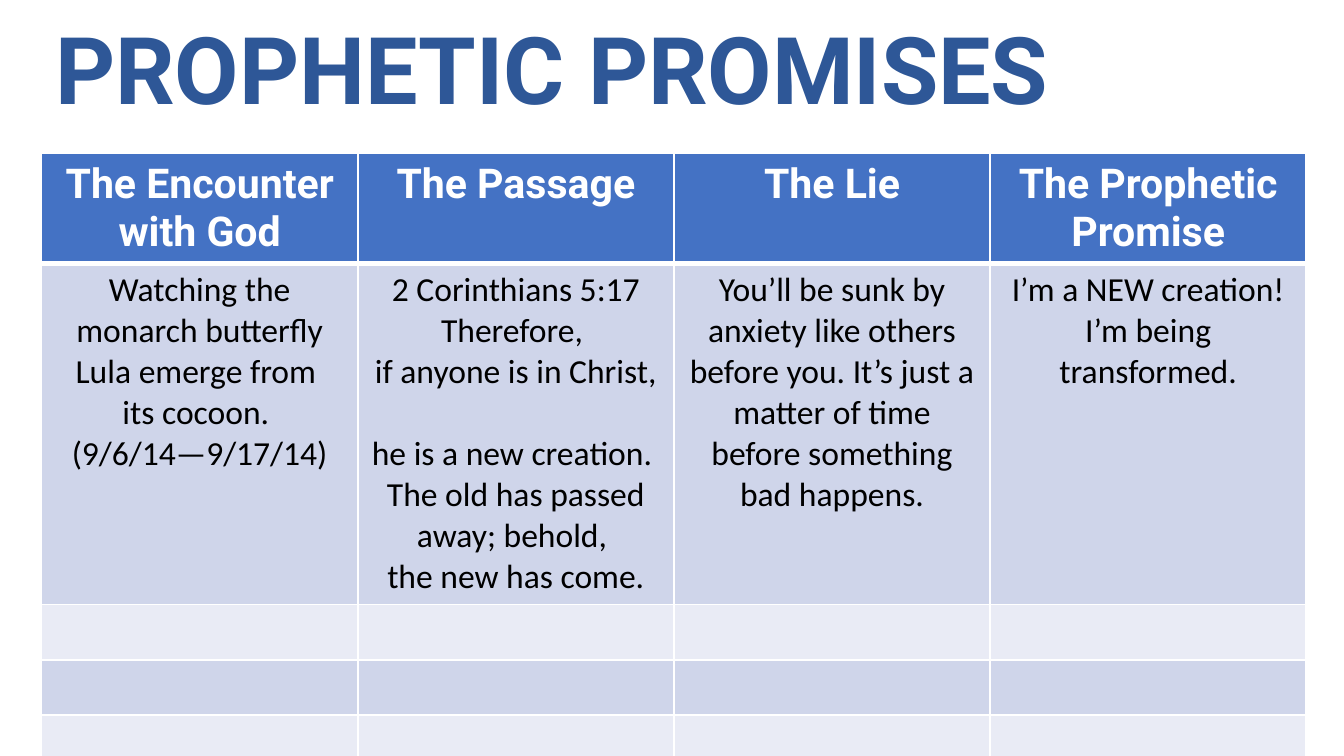
"""Build the Prophetic Promises table slide."""
from lxml import etree
from pptx import Presentation
from pptx.dml.color import RGBColor
from pptx.enum.text import MSO_ANCHOR, PP_ALIGN
from pptx.oxml.ns import qn
from pptx.util import Inches, Pt

LEFT, CENTER = PP_ALIGN.LEFT, PP_ALIGN.CENTER
MIDDLE = MSO_ANCHOR.MIDDLE
COLORS = {"title": "2E5797", "head": "4472C4", "dark": "CFD5EA",
          "light": "E9EBF5", "white": "FFFFFF", "black": "000000"}
HEADS = ["The Encounter with God", "The Passage", "The Lie", "The Prophetic Promise"]
BODY = [
    "Watching the monarch butterfly Lula emerge from \vits cocoon. \v(9/6/14—9/17/14)",
    "2 Corinthians 5:17 Therefore, \vif anyone is in Christ, \vhe is a new creation. "
    "\vThe old has passed away; behold, \vthe new has come.",
    "You’ll be sunk by anxiety like others before you. It’s just a matter of time "
    "before something bad happens.",
    "I’m a NEW creation!\nI’m being transformed.",
]
BLANK = [""] * 4
ROWS = [(HEADS, 0.81, "head"), (BODY, 2.54, "dark"), (BLANK, 0.41, "light"),
        (BLANK, 0.41, "dark"), (BLANK, 0.41, "light")]
WIDTH = 9.41


def style(para, name, size, color, bold, align):
    para.alignment = align
    font = para.font
    font.name, font.size, font.bold = name, Pt(size), bold
    font.color.rgb = RGBColor.from_string(COLORS[color])


def border(cell, side, width):
    line = etree.SubElement(cell._tc.get_or_add_tcPr(), qn(f"a:ln{side}"), w=str(Pt(width)))
    fill = etree.SubElement(line, qn("a:solidFill"))
    etree.SubElement(fill, qn("a:srgbClr"), val=COLORS["white"])


prs = Presentation()
prs.slide_width, prs.slide_height = Inches(10), Inches(10 * 9 / 16)
slide = prs.slides.add_slide(prs.slide_layouts[5])

title = slide.shapes.title
title.left, title.top = Inches(0.31), Inches(0.12)
title.width, title.height = Inches(9.6), Inches(0.86)
title.text = "PROPHETIC PROMISES"
title.text_frame.vertical_anchor = MIDDLE
para = title.text_frame.paragraphs[0]
para.line_spacing = 0.9
style(para, "Roboto", 50, "title", True, LEFT)

total = sum(height for _, height, _ in ROWS)
table = slide.shapes.add_table(len(ROWS), len(HEADS), Inches(0.31), Inches(1.14),
                               Inches(WIDTH), Inches(total)).table
for col in table.columns:
    col.width = Inches(WIDTH / len(HEADS))

for r, (texts, height, shade) in enumerate(ROWS):
    table.rows[r].height = Inches(height)
    for c, text in enumerate(texts):
        cell = table.cell(r, c)
        for side in "LRTB":
            thick = (r, side) in [(0, "B"), (1, "T")]
            border(cell, side, 3 if thick else 1)
        cell.fill.solid()
        cell.fill.fore_color.rgb = RGBColor.from_string(COLORS[shade])
        if text:
            cell.text = text
            for para in cell.text_frame.paragraphs:
                if r == 0:
                    style(para, "Roboto", 22, "white", True, CENTER)
                else:
                    style(para, "Calibri", 18, "black", False, CENTER)

prs.save("out.pptx")
